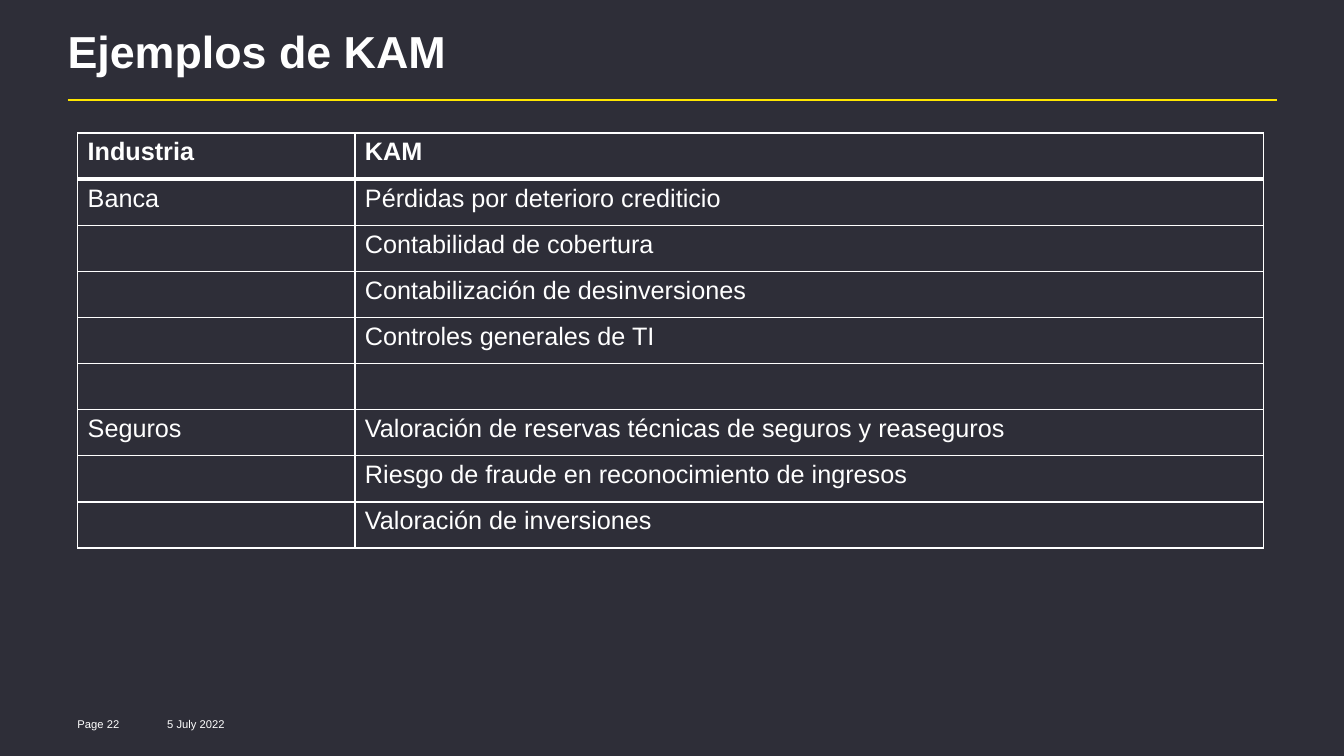
from dataclasses import dataclass

import lxml.etree
import pptx
import pptx.dml.color
import pptx.enum.shapes
import pptx.enum.text
import pptx.oxml.ns
import pptx.presentation
import pptx.slide
import pptx.table
import pptx.text.text
import pptx.util
from pptx.util import Inches


@dataclass(frozen=True)
class Theme:
    background: str = "2E2E38"
    text: str = "FFFFFF"
    accent: str = "FFE600"
    font: str = "Arial"
    title_size: int = 32
    table_size: int = 18
    footer_size: int = 8
    rule_width: float = 1.5
    border_width: float = 1
    header_border_width: float = 3


@dataclass(frozen=True)
class TextBox:
    text: str
    left: float
    top: float
    width: float
    height: float
    size: int
    bold: bool = False
    inset: float = 0.1
    line_spacing: float = 1.0
    anchor: pptx.enum.text.MSO_ANCHOR = pptx.enum.text.MSO_ANCHOR.MIDDLE


THEME = Theme()

TEXT_BOXES = [
    TextBox("Ejemplos de KAM", 0.67, 0.32, 10.85, 0.65, THEME.title_size, bold=True,
            inset=0, line_spacing=0.85, anchor=pptx.enum.text.MSO_ANCHOR.TOP),
    TextBox("5 July 2022", 1.56, 7.08, 1.3, 0.2, THEME.footer_size),
    TextBox("Page 22", 0.67, 7.08, 0.72, 0.2, THEME.footer_size),
]

ROWS = [
    ("Industria", "KAM"),
    ("Banca", "Pérdidas por deterioro crediticio"),
    ("", "Contabilidad de cobertura"),
    ("", "Contabilización de desinversiones"),
    ("", "Controles generales de TI"),
    ("", ""),
    ("Seguros", "Valoración de reservas técnicas de seguros y reaseguros"),
    ("", "Riesgo de fraude en reconocimiento de ingresos"),
    ("", "Valoración de inversiones"),
]
COLUMN_WIDTHS = (2.75, 9.01)
TABLE_LEFT, TABLE_TOP, TABLE_HEIGHT = 0.77, 1.32, 4.12


def rgb(color: str) -> pptx.dml.color.RGBColor:
    return pptx.dml.color.RGBColor.from_string(color)


def style_paragraph(paragraph: pptx.text.text._Paragraph, size: int, bold: bool) -> None:
    font = paragraph.font
    font.name = THEME.font
    font.size = pptx.util.Pt(size)
    font.bold = bold
    font.color.rgb = rgb(THEME.text)


def add_text_box(slide: pptx.slide.Slide, box: TextBox) -> None:
    shape = slide.shapes.add_textbox(
        Inches(box.left), Inches(box.top), Inches(box.width), Inches(box.height))
    frame = shape.text_frame
    frame.word_wrap = True
    frame.vertical_anchor = box.anchor
    frame.margin_left = frame.margin_right = Inches(box.inset)
    frame.margin_top = frame.margin_bottom = Inches(box.inset / 2)
    paragraph = frame.paragraphs[0]
    paragraph.text = box.text
    paragraph.line_spacing = box.line_spacing
    style_paragraph(paragraph, box.size, box.bold)


def add_title_rule(slide: pptx.slide.Slide) -> None:
    rule = slide.shapes.add_connector(
        pptx.enum.shapes.MSO_CONNECTOR.STRAIGHT,
        Inches(0.67), Inches(0.99), Inches(12.67), Inches(0.99))
    rule.line.color.rgb = rgb(THEME.accent)
    rule.line.width = pptx.util.Pt(THEME.rule_width)
    lxml.etree.SubElement(rule._element.spPr, pptx.oxml.ns.qn("a:effectLst"))


def set_borders(cell: pptx.table._Cell, top: float, bottom: float) -> None:
    properties = cell._tc.get_or_add_tcPr()
    widths = {"a:lnL": THEME.border_width, "a:lnR": THEME.border_width,
              "a:lnT": top, "a:lnB": bottom}
    # Borders come before the fill in the cell properties
    for position, (tag, width) in enumerate(widths.items()):
        border = lxml.etree.Element(
            pptx.oxml.ns.qn(tag), w=str(int(pptx.util.Pt(width))))
        fill = lxml.etree.SubElement(border, pptx.oxml.ns.qn("a:solidFill"))
        lxml.etree.SubElement(fill, pptx.oxml.ns.qn("a:srgbClr"), val=THEME.text)
        properties.insert(position, border)


def add_kam_table(slide: pptx.slide.Slide) -> None:
    table = slide.shapes.add_table(
        len(ROWS), len(COLUMN_WIDTHS), Inches(TABLE_LEFT), Inches(TABLE_TOP),
        Inches(sum(COLUMN_WIDTHS)), Inches(TABLE_HEIGHT)).table
    table.horz_banding = False
    for column, width in zip(table.columns, COLUMN_WIDTHS):
        column.width = Inches(width)
    for row_index, row in enumerate(ROWS):
        top = THEME.header_border_width if row_index == 1 else THEME.border_width
        bottom = THEME.header_border_width if row_index == 0 else THEME.border_width
        for column_index, text in enumerate(row):
            cell = table.cell(row_index, column_index)
            cell.text = text
            style_paragraph(cell.text_frame.paragraphs[0], THEME.table_size,
                            bold=row_index == 0)
            cell.fill.background()
            set_borders(cell, top, bottom)


def build() -> pptx.presentation.Presentation:
    presentation = pptx.Presentation()
    presentation.slide_width = Inches(13.33)
    presentation.slide_height = Inches(7.5)
    slide = presentation.slides.add_slide(presentation.slide_layouts[6])

    # Background
    slide.background.fill.solid()
    slide.background.fill.fore_color.rgb = rgb(THEME.background)

    # Title rule, title and footer
    add_title_rule(slide)
    for box in TEXT_BOXES:
        add_text_box(slide, box)

    # Table of key audit matters by industry
    add_kam_table(slide)
    return presentation


if __name__ == "__main__":
    build().save("out.pptx")
